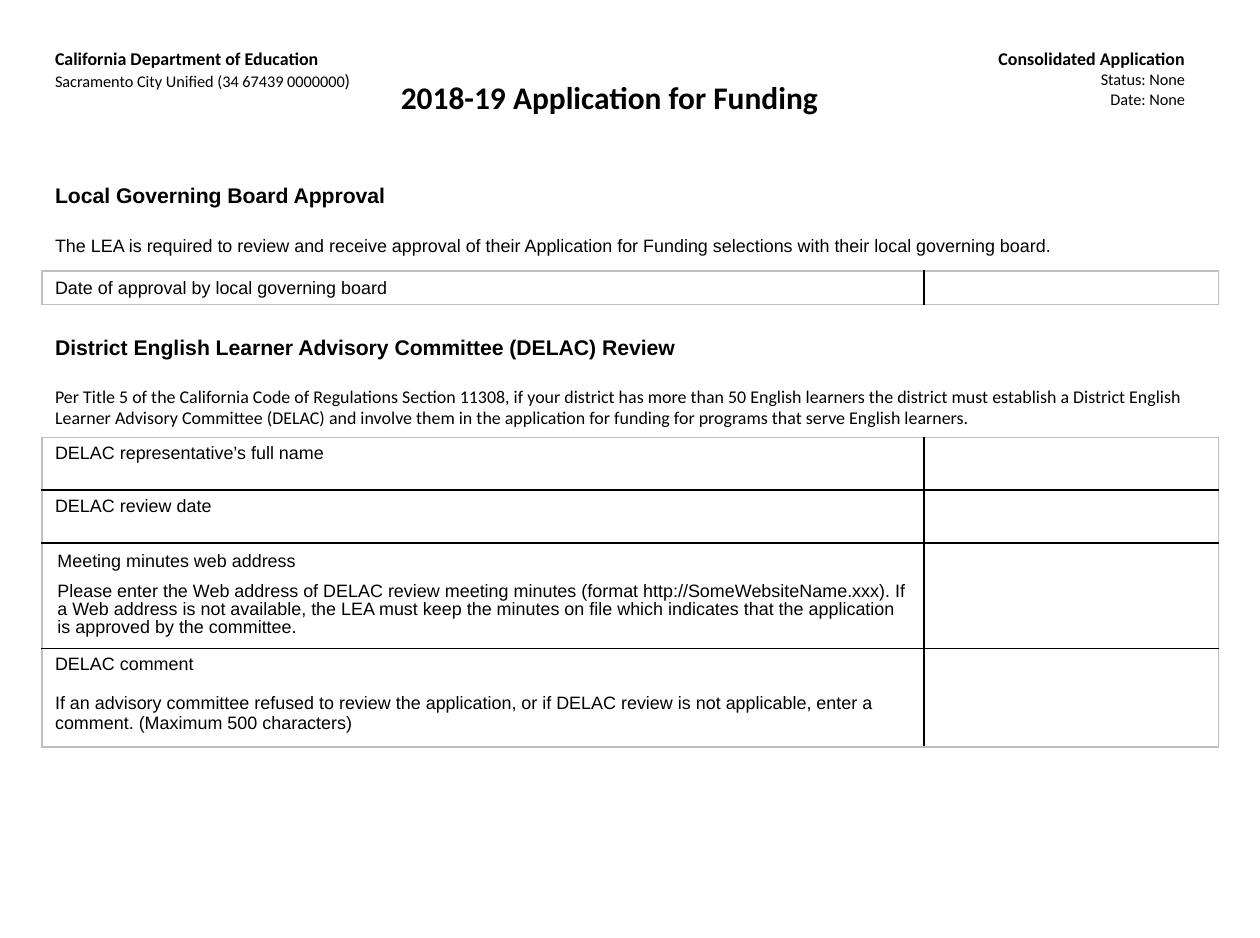
import lxml.etree
import pptx
import pptx.dml.color
import pptx.enum.text
import pptx.oxml.ns
import pptx.util

BLACK, GRAY = "000000", "BFBFBF"
RIGHT = pptx.enum.text.PP_ALIGN.RIGHT
CENTER = pptx.enum.text.PP_ALIGN.CENTER
TOP = pptx.enum.text.MSO_ANCHOR.TOP
MIDDLE = pptx.enum.text.MSO_ANCHOR.MIDDLE

HEADING = {"name": "Arial", "size": 13, "bold": True}
BODY = {"name": "Arial", "size": 11}
NOTE = {"name": "Calibri", "size": 11}
STRONG = {**NOTE, "bold": True}
DETAIL = {"name": "Calibri", "size": 10}
TITLE = {"name": "Calibri", "size": 19.3, "bold": True}


def color(value):
    return pptx.dml.color.RGBColor.from_string(value)


def set_values(target, values):
    for name, value in values.items():
        setattr(target, name, value)


class Form:
    """Style and current slide; lengths are grid steps of a tenth of an inch."""

    STEP = pptx.util.Inches(0.1)
    COLUMNS, ROWS = 107.5, 80
    MARGINS = {"margin_left": pptx.util.Inches(0.11), "margin_right": pptx.util.Inches(0.11),
               "margin_top": pptx.util.Inches(0.05), "margin_bottom": pptx.util.Inches(0.05)}

    def __init__(self):
        self.presentation = pptx.Presentation()
        self.presentation.slide_width = self.grid(self.COLUMNS)
        self.presentation.slide_height = self.grid(self.ROWS)
        self.slide = self.presentation.slides.add_slide(self.presentation.slide_layouts[6])

    def grid(self, steps):
        return pptx.util.Emu(round(steps * self.STEP))

    def fill_text(self, frame, paragraphs):
        """Fill a frame from (runs, paragraph format) pairs; a run is (text, font)."""
        for index, (runs, layout) in enumerate(paragraphs):
            paragraph = frame.add_paragraph() if index else frame.paragraphs[0]
            layout = dict(layout)
            indent = layout.pop("left_indent", None)
            if indent:
                paragraph._p.get_or_add_pPr().set("marL", str(self.grid(indent)))
            set_values(paragraph, layout)
            for text, font in runs:
                run = paragraph.add_run()
                run.text = text
                set_values(run.font, {**font, "size": pptx.util.Pt(font["size"])})
                run.font.color.rgb = color(BLACK)

    def text(self, left, top, width, height, paragraphs, **margins):
        box = self.slide.shapes.add_textbox(*map(self.grid, (left, top, width, height)))
        set_values(box.text_frame, {"word_wrap": True, **self.MARGINS, **margins})
        self.fill_text(box.text_frame, paragraphs)

    def border(self, cell, side, value):
        line = lxml.etree.SubElement(cell._tc.get_or_add_tcPr(),
                                     pptx.oxml.ns.qn(f"a:ln{side}"), w="12700")
        fill = lxml.etree.SubElement(line, pptx.oxml.ns.qn("a:solidFill"))
        lxml.etree.SubElement(fill, pptx.oxml.ns.qn("a:srgbClr"), val=value)

    def table(self, left, top, columns, rows, labels, anchor=TOP):
        """Labels fill the first column; the answer column stays empty."""
        frame = self.slide.shapes.add_table(len(rows), len(columns), *map(
            self.grid, (left, top, sum(columns), sum(rows))))
        table = frame.table
        set_values(table, {"first_row": False, "horz_banding": False})
        for column, width in zip(table.columns, columns):
            column.width = self.grid(width)
        last_row, last_column = len(rows) - 1, len(columns) - 1
        for row, height in enumerate(rows):
            table.rows[row].height = self.grid(height)
            for column in range(len(columns)):
                cell = table.cell(row, column)
                outer = {"L": column == 0, "R": column == last_column,
                         "T": row == 0, "B": row == last_row}
                for side, is_outer in outer.items():
                    self.border(cell, side, GRAY if is_outer else BLACK)
                cell.fill.background()
                set_values(cell, {**self.MARGINS, "vertical_anchor": anchor})
                if column == 0:
                    self.fill_text(cell.text_frame, labels[row])
                else:
                    # An empty cell needs a small font or it stretches its row.
                    lxml.etree.SubElement(cell.text_frame.paragraphs[0]._p,
                                          pptx.oxml.ns.qn("a:endParaRPr"), sz="1100")


def line(text, font=BODY, **layout):
    return [(text, font)], layout


def main():
    point = pptx.util.Pt
    left, columns = 3.6, (75.25, 25.1)
    form = Form()
    form.text(26.9, 6.2, 50.2, 4.3, [
        line("2018-19 Application for Funding", TITLE, alignment=CENTER)])
    form.text(left, 15.1, sum(columns), 38.3, [
        line("Local Governing Board Approval", HEADING),
        line("The LEA is required to review and receive approval of their Application for "
             "Funding selections with their local governing board.", space_before=point(16)),
        line("District English Learner Advisory Committee (DELAC) Review", HEADING,
             space_before=point(48)),
        line("Per Title 5 of the California Code of Regulations Section 11308, if your district "
             "has more than 50 English learners the district must establish a District English "
             "Learner Advisory Committee (DELAC) and involve them in the application for funding "
             "for programs that serve English learners.", NOTE, space_before=point(16))])
    form.table(left, 23.1, columns, [2.9],
               [[line("Date of approval by local governing board")]], MIDDLE)
    form.table(left, 37.3, columns, [4.5, 4.5, 9, 8.4], [
        [line("DELAC representative’s full name")],
        [line("DELAC review date")],
        [line("Meeting minutes web address", left_indent=0.2, line_spacing=1.15,
              space_before=point(1.2)),
         line("Please enter the Web address of DELAC review meeting minutes (format "
              "http://SomeWebsiteName.xxx). If a Web address is not available, the LEA must keep "
              "the minutes on file which indicates that the application is approved by the "
              "committee.", left_indent=0.2, line_spacing=point(11.2), space_before=point(6.9))],
        [line("DELAC comment"),
         line("If an advisory committee refused to review the application, or if DELAC review is "
              "not applicable, enter a comment. (Maximum 500 characters)",
              space_before=point(12))]])
    form.text(left, 3.6, 28.7, 8, [
        line("California Department of Education", STRONG),
        ([("Sacramento City Unified (34 67439 0000000", DETAIL), (")", NOTE)], {})])
    form.text(75.3, 3.6, 27.8, 8.2, [
        line("Consolidated Application", STRONG, alignment=RIGHT),
        line("Status: None", DETAIL, alignment=RIGHT),
        line("Date: None", DETAIL, alignment=RIGHT)], margin_right=form.grid(2))
    form.presentation.save("out.pptx")


if __name__ == "__main__":
    main()
